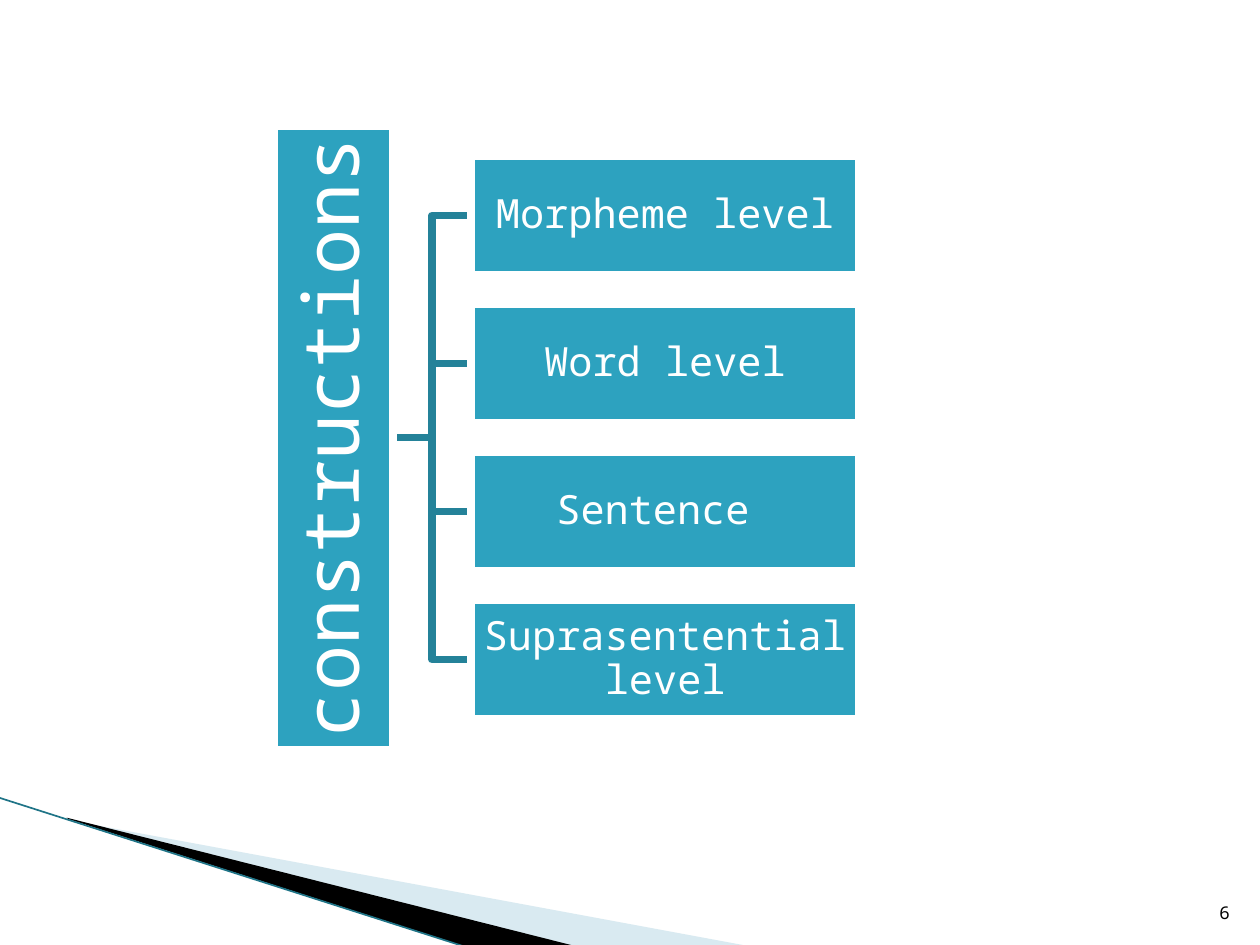
from dataclasses import dataclass

from lxml import etree
from pptx import Presentation
from pptx.dml.color import RGBColor
from pptx.enum.shapes import MSO_CONNECTOR, MSO_SHAPE
from pptx.enum.text import MSO_ANCHOR, PP_ALIGN
from pptx.oxml.ns import qn
from pptx.util import Inches, Pt

RECT, STRAIGHT = MSO_SHAPE.RECTANGLE, MSO_CONNECTOR.STRAIGHT
MIDDLE, BOTTOM = MSO_ANCHOR.MIDDLE, MSO_ANCHOR.BOTTOM
CENTER, RIGHT = PP_ALIGN.CENTER, PP_ALIGN.RIGHT

SLIDE_W, SLIDE_H = 10, 7.5
ROW_H = 0.94
ROW_PITCH = 1.25 * ROW_H
TREE_TOP = 1.24
LEVEL_LEFT, LEVEL_W = 3.74, 3.08
ROOT_RIGHT, ROOT_LENGTH = 3.12, 4.95


@dataclass(frozen=True)
class Theme:
    font: str = "Noto Sans Mono"
    box: str = "2DA2BF"
    branch: str = "248299"
    light: str = "FFFFFF"
    dark: str = "000000"
    wedge: str = "A0CBDC"
    edge: str = "1F7487"
    root_size: int = 44
    level_size: int = 23
    number_size: int = 10
    line: float = 4.33
    edge_line: float = 0.95


@dataclass(frozen=True)
class Box:
    text: str
    left: float
    top: float
    width: float
    height: float
    size: int
    inset: float = 0.02
    rotation: int = 0


@dataclass(frozen=True)
class Wedge:
    points: tuple
    color: str
    opacity: int = 100


THEME = Theme()
LEVELS = ("Morpheme level", "Word level", "Sentence ", "Suprasentential level")
TREE_MIDDLE = TREE_TOP + ((len(LEVELS) - 1) * ROW_PITCH + ROW_H) / 2

ROOT = Box("constructions", ROOT_RIGHT - (ROOT_LENGTH + ROW_H) / 2,
           TREE_MIDDLE - ROW_H / 2, ROOT_LENGTH, ROW_H,
           THEME.root_size, 0.03, 270)
LEVEL_BOXES = [Box(text, LEVEL_LEFT, TREE_TOP + row * ROW_PITCH, LEVEL_W, ROW_H,
                   THEME.level_size) for row, text in enumerate(LEVELS)]
WEDGES = (
    Wedge(((0.55, 6.51), (5.95, 7.51), (4.56, 7.51), (0.55, 6.5)), THEME.wedge, 40),
    Wedge(((0.53, 6.49), (4.57, 7.51), (3.72, 7.52), (0.54, 6.5)), THEME.dark),
)


def rgb(color: str) -> RGBColor:
    return RGBColor.from_string(color)


def set_line(shape, color: str, width: float) -> None:
    shape.line.color.rgb = rgb(color)
    shape.line.width = Pt(width)


def write(shape, text: str, *, size: int, color: str, align=CENTER,
          anchor=MIDDLE, inset: float = 0.02, spacing: float = 1.0) -> None:
    tf = shape.text_frame
    tf.word_wrap = True
    tf.vertical_anchor = anchor
    tf.margin_left = tf.margin_right = tf.margin_top = tf.margin_bottom = Inches(inset)
    p = tf.paragraphs[0]
    p.alignment = align
    p.line_spacing = spacing
    r = p.add_run()
    r.text = text
    r.font.name = THEME.font
    r.font.size = Pt(size)
    r.font.color.rgb = rgb(color)


def add_outline(s, points: tuple, close: bool):
    """Draw a freeform through points given in inches."""
    start, *rest = [(Inches(x), Inches(y)) for x, y in points]
    builder = s.shapes.build_freeform(*start)
    builder.add_line_segments(rest, close=close)
    sp = builder.convert_to_shape()
    sp.shadow.inherit = False
    return sp


def add_wedge(s, wedge: Wedge) -> None:
    sp = add_outline(s, wedge.points, close=True)
    sp.fill.solid()
    sp.fill.fore_color.rgb = rgb(wedge.color)
    sp.line.fill.background()
    if wedge.opacity < 100:
        color = sp.fill._xPr.find(".//" + qn("a:srgbClr"))
        etree.SubElement(color, qn("a:alpha"), val=str(wedge.opacity * 1000))


def add_edge(s) -> None:
    """Draw the thin line along the lower side of the wedges."""
    line = s.shapes.add_connector(STRAIGHT, Inches(-0.01), Inches(6.33),
                                  Inches(3.71), Inches(7.52))
    set_line(line, THEME.edge, THEME.edge_line)
    etree.SubElement(line._element.spPr, qn("a:effectLst"))


def add_branch(s, box: Box) -> None:
    """Draw the elbow from the root to one level."""
    bend = (ROOT_RIGHT + box.left) / 2
    y = box.top + box.height / 2
    sp = add_outline(s, ((ROOT_RIGHT, TREE_MIDDLE), (bend, TREE_MIDDLE),
                         (bend, y), (box.left, y)), close=False)
    sp.fill.background()
    set_line(sp, THEME.branch, THEME.line)


def add_box(s, box: Box) -> None:
    sp = s.shapes.add_shape(RECT, Inches(box.left), Inches(box.top),
                            Inches(box.width), Inches(box.height))
    sp.shadow.inherit = False
    sp.rotation = box.rotation
    sp.fill.solid()
    sp.fill.fore_color.rgb = rgb(THEME.box)
    set_line(sp, THEME.light, THEME.line)
    write(sp, box.text, size=box.size, color=THEME.light, inset=box.inset, spacing=0.9)


def add_slide_number(s, number: str) -> None:
    tb = s.shapes.add_textbox(Inches(9.46), Inches(7.01), Inches(0.4), Inches(0.4))
    write(tb, number, size=THEME.number_size, color=THEME.dark,
          align=RIGHT, anchor=BOTTOM, inset=0.1)


def main() -> None:
    prs = Presentation()
    prs.slide_width, prs.slide_height = Inches(SLIDE_W), Inches(SLIDE_H)
    s = prs.slides.add_slide(prs.slide_layouts[6])
    for wedge in WEDGES:
        add_wedge(s, wedge)
    add_edge(s)
    for box in reversed(LEVEL_BOXES):
        add_branch(s, box)
    for box in (ROOT, *LEVEL_BOXES):
        add_box(s, box)
    add_slide_number(s, "6")
    prs.save("out.pptx")


if __name__ == "__main__":
    main()
